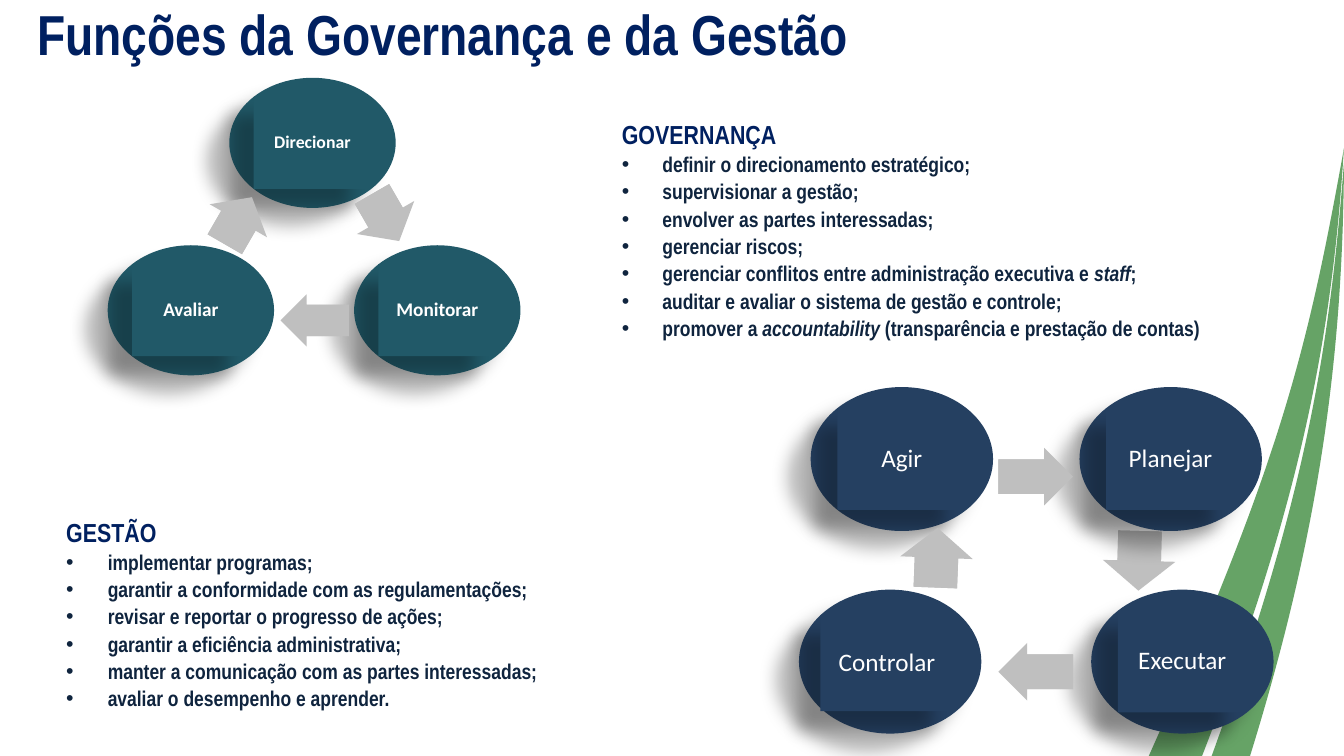
from math import cos, radians, sin

from lxml import etree
from pptx import Presentation
from pptx.dml.color import RGBColor
from pptx.enum.shapes import MSO_SHAPE as SHAPE
from pptx.enum.text import MSO_ANCHOR as ANCHOR, PP_ALIGN as ALIGN
from pptx.oxml.ns import qn
from pptx.util import Inches, Pt

COLORS = {"green": "006600", "navy": "002060", "ink": "0F243E", "teal": "215968",
          "blue": "254061", "grey": "BFBFBF", "white": "FFFFFF", "shadow": "000000"}
NARROW, SANS = "Arial Narrow", "Calibri"
UNITS = 1000  # freeform units per inch


def rgb(name):
    return RGBColor.from_string(COLORS[name])


def set_font(font, name, size, color, bold=False):
    font.name, font.size, font.bold = name, Pt(size), bold
    font.color.rgb = rgb(color)


def paint(sp, color):
    sp.shadow.inherit = False
    sp.fill.solid()
    sp.fill.fore_color.rgb = rgb(color)
    sp.line.fill.background()


def add_shape(s, kind, box, color):
    sp = s.shapes.add_shape(kind, *map(Inches, box))
    paint(sp, color)
    return sp


def add_shadow(sp):
    effects = sp._element.spPr.find(qn("a:effectLst"))
    shadow = etree.SubElement(effects, qn("a:outerShdw"), blurRad=str(Pt(11.8)),
                              dist=str(Pt(19.7)), dir=str(141 * 60000),
                              algn="ctr", rotWithShape="0")
    clr = etree.SubElement(shadow, qn("a:srgbClr"), val=COLORS["shadow"])
    etree.SubElement(clr, qn("a:alpha"), val="28000")


def add_text(s, box, inset_x, inset_y):
    tf = s.shapes.add_textbox(*map(Inches, box)).text_frame
    tf.word_wrap = True
    tf.margin_left = tf.margin_right = Inches(inset_x)
    tf.margin_top = tf.margin_bottom = Inches(inset_y)
    return tf


def add_blade(s, box, outer, inner):
    """Green blade bounded by two cubic curves; points are relative to the box."""
    corners = [outer[0], outer[3], inner[0], inner[3]]
    fb = s.shapes.build_freeform(*(c * UNITS for c in corners[0]), scale=Inches(1) / UNITS)
    fb.add_line_segments([(x * UNITS, y * UNITS) for x, y in corners[1:]], close=True)
    sp = fb.convert_to_shape(*map(Inches, box))
    paint(sp, "green")
    clr = sp._element.spPr.find(qn("a:solidFill"))[0]
    etree.SubElement(clr, qn("a:alpha"), val="60000")

    # Bend the two long sides
    sides = list(sp._element.iter(qn("a:lnTo")))
    for side, curve in ((sides[0], outer), (sides[2], inner)):
        bend = etree.Element(qn("a:cubicBezTo"))
        for x, y in curve[1:]:
            etree.SubElement(bend, qn("a:pt"), x=str(round(x * UNITS)), y=str(round(y * UNITS)))
        side.getparent().replace(side, bend)


def add_title(s, box, text):
    tf = add_text(s, box, 0.1, 0.05)
    tf.vertical_anchor = ANCHOR.MIDDLE
    p = tf.paragraphs[0]
    p.text = text
    set_font(p.font, NARROW, 38, "navy", True)


def add_list(s, box, indent, heading, items):
    """Heading and bullets; an item is a tuple of runs, every second one italic."""
    tf = add_text(s, box, 0.14, 0.07)
    p = tf.paragraphs[0]
    p.text = heading
    p.space_before = Pt(4)
    set_font(p.font, NARROW, 17.6, "navy", True)
    for item in items:
        p = tf.add_paragraph()
        p.line_spacing, p.space_before = 0.9, Pt(2.9)
        set_font(p.font, NARROW, 14.4, "ink", True)
        for i, text in enumerate(item):
            r = p.add_run()
            r.text = text
            if i % 2:
                r.font.italic = True
        pPr = p._p.get_or_add_pPr()
        pPr.set("marL", str(Inches(indent)))
        pPr.set("indent", str(-Inches(indent)))
        defaults = pPr.find(qn("a:defRPr"))
        defaults.addprevious(etree.Element(qn("a:buFont"), typeface="Arial"))
        defaults.addprevious(etree.Element(qn("a:buChar"), char="•"))


def add_arrow(s, box, angle):
    """Rotated block arrow with a panel over its shaft."""
    x, y, w, h = box
    arrow = add_shape(s, SHAPE.RIGHT_ARROW, box, "grey")
    arrow.adjustments[0], arrow.adjustments[1] = 0.6, 0.5
    back, turn = 0.15 * w, radians(angle)
    panel = (x + 0.15 * w - back * cos(turn), y + 0.2 * h - back * sin(turn), 0.7 * w, 0.6 * h)
    shaft = add_shape(s, SHAPE.RECTANGLE, panel, "grey")
    arrow.rotation = shaft.rotation = angle


def add_cycle(s, box, oval, color, bold, steps):
    """Ovals and arrows, placed from the box corner."""
    x, y = box
    w, h = oval
    for label, size, (dx, dy), (ax, ay, aw, ah), angle, label_box in steps:
        left, top = x + dx, y + dy
        add_shadow(add_shape(s, SHAPE.OVAL, (left, top, w, h), color))

        # Label panel, by default the rectangle inscribed in the oval
        lx, ly, lw, lh = label_box or (0.146 * w, 0.146 * h, 0.707 * w, 0.707 * h)
        sp = add_shape(s, SHAPE.RECTANGLE, (left + lx, top + ly, lw, lh), color)
        add_shadow(sp)
        tf = sp.text_frame
        tf.word_wrap, tf.vertical_anchor = True, ANCHOR.MIDDLE
        tf.margin_left = tf.margin_right = Inches(0.02)
        tf.margin_top = tf.margin_bottom = Inches(0.02)
        p = tf.paragraphs[0]
        p.text, p.alignment, p.line_spacing = label, ALIGN.CENTER, 0.9
        set_font(p.font, SANS, size, "white", bold)

        add_arrow(s, (x + ax, y + ay, aw, ah), angle)


GOVERNANCE = [("definir o direcionamento estratégico;",), ("supervisionar a gestão;",),
              ("envolver as partes interessadas;",), ("gerenciar riscos;",),
              ("gerenciar conflitos entre administração executiva e ", "staff", ";"),
              ("auditar e avaliar o sistema de gestão e controle;",),
              ("promover a ", "accountability ", "(transparência e prestação de contas)")]
MANAGEMENT = [("implementar programas;",),
              ("garantir a conformidade com as regulamentações;",),
              ("revisar e reportar o progresso de ações;",),
              ("garantir a eficiência administrativa;",),
              ("manter a comunicação com as partes interessadas;",),
              ("avaliar o desempenho e aprender.",)]
# Label, size, oval offset, arrow box, arrow angle, label panel
GOVERNANCE_CYCLE = [
    ("Direcionar", 12, (1.14, 0), (2.35, 1, 0.51, 0.62), 60, None),
    ("Monitorar", 13, (2.31, 1.57), (1.62, 2.03, 0.64, 0.49), 180, None),
    ("Avaliar", 13, (0, 1.57), (0.97, 1.03, 0.51, 0.62), 300, None)]
MANAGEMENT_CYCLE = [
    ("Agir", 17, (0.11, 0), (2.91, 1.29, 0.56, 0.68), 91.5, None),
    ("Executar", 17, (2.74, 1.9), (1.87, 2.4, 0.7, 0.54), 180, None),
    ("Controlar", 17, (0, 1.9), (1.01, 1.26, 0.56, 0.68), 272.2, (0.2, 0.24, 1.25, 0.9)),
    ("Planejar", 17, (2.63, 0), (1.87, 0.57, 0.7, 0.54), 0, None)]


def main():
    prs = Presentation()
    prs.slide_width, prs.slide_height = Inches(12.6), Inches(7.09)
    s = prs.slides.add_slide(prs.slide_layouts[6])

    # Green blades at the right edge
    add_blade(s, (10.77, 1.39), [(1.83, 0), (1.49, 1.89), (1.24, 2.93), (0, 5.7)],
              [(0.5, 5.7), (1.37, 3.46), (1.71, 1.91), (1.83, 0)])
    add_blade(s, (11.36, 1.53), [(1.24, 0), (1.1, 1.79), (0.88, 3.13), (0, 5.56)],
              [(0.36, 5.56), (0.97, 3.59), (1.23, 1.94), (1.24, 0)])

    # Title and lists
    add_title(s, (0.25, 0.02, 10.71, 0.57), "Funções da Governança e da Gestão")
    add_list(s, (5.69, 1.04, 6.66, 2.59), 0.38, "GOVERNANÇA", GOVERNANCE)
    add_list(s, (0.48, 4.77, 5.98, 2.25), 0.39, "GESTÃO", MANAGEMENT)

    # Cycles
    add_cycle(s, (1.01, 0.73), (1.56, 1.22), "teal", True, GOVERNANCE_CYCLE)
    add_cycle(s, (7.49, 3.63), (1.71, 1.35), "blue", False, MANAGEMENT_CYCLE)
    prs.save("out.pptx")


if __name__ == "__main__":
    main()
